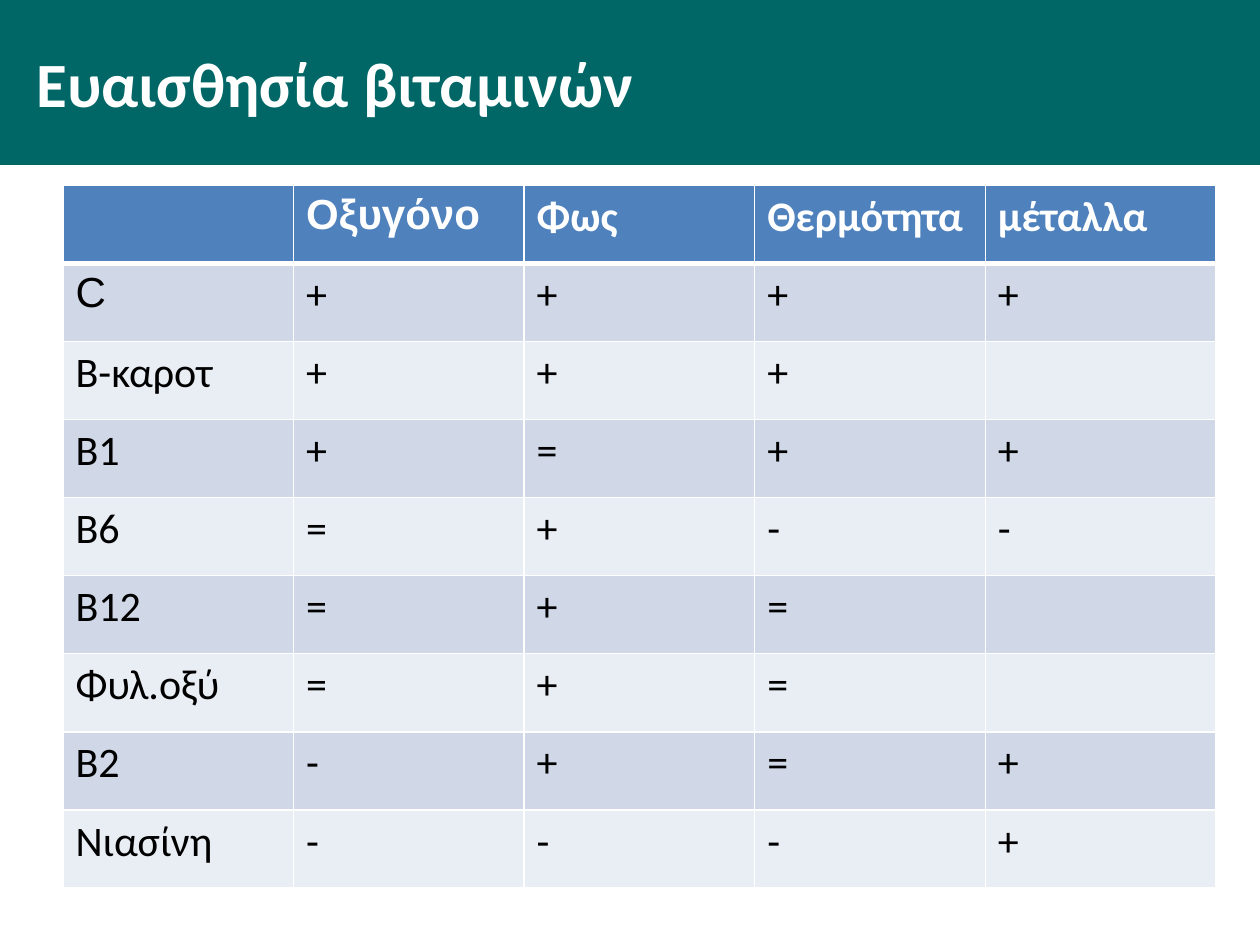
from lxml.etree import SubElement
from pptx import Presentation
from pptx.dml.color import RGBColor
from pptx.enum.shapes import MSO_SHAPE
from pptx.enum.text import MSO_ANCHOR, PP_ALIGN
from pptx.oxml.ns import qn
from pptx.util import Inches, Pt

TEAL = RGBColor(0x00, 0x66, 0x66)
BLUE = RGBColor(0x4F, 0x81, 0xBD)
BAND_DARK = RGBColor(0xD0, 0xD8, 0xE8)
BAND_LIGHT = RGBColor(0xE9, 0xED, 0xF4)
WHITE = RGBColor(0xFF, 0xFF, 0xFF)
BLACK = RGBColor(0x00, 0x00, 0x00)

SENSITIVITY = [
    ["", "Οξυγόνο", "Φως", "Θερμότητα", "μέταλλα"],
    ["C", "+", "+", "+", "+"],
    ["Β-καροτ", "+", "+", "+", ""],
    ["Β1", "+", "=", "+", "+"],
    ["Β6", "=", "+", "-", "-"],
    ["Β12", "=", "+", "=", ""],
    ["Φυλ.οξύ", "=", "+", "=", ""],
    ["Β2", "-", "+", "=", "+"],
    ["Νιασίνη", "-", "-", "-", "+"],
]
ARIAL_LABELS = {"Οξυγόνο", "C"}


def write(frame, wording, size, color, **formats):
    """Put one formatted run into a text frame."""
    run = frame.paragraphs[0].add_run()
    run.text = wording
    run.font.color.rgb = color
    for name, value in {"size": Pt(size), "name": "Calibri", **formats}.items():
        setattr(run.font, name, value)


def add_title_band(slide, wording):
    """Draw the full-width band that holds the title."""
    band = slide.shapes.add_shape(
        MSO_SHAPE.RECTANGLE, 0, 0, Inches(10), Inches(1.31))
    band.shadow.inherit = False
    band.fill.solid()
    band.fill.fore_color.rgb = TEAL
    band.line.fill.background()
    frame = band.text_frame
    layout = {"word_wrap": True, "margin_left": Inches(0.29),
              "vertical_anchor": MSO_ANCHOR.MIDDLE}
    for name, value in layout.items():
        setattr(frame, name, value)
    frame.paragraphs[0].alignment = PP_ALIGN.LEFT
    write(frame, wording, 36, WHITE, bold=True)


def add_borders(cell, row):
    """Edge a cell in white, with a heavier rule under the header."""
    widths = {"a:lnL": 1, "a:lnR": 1, "a:lnT": 3 if row == 1 else 1,
              "a:lnB": 3 if row == 0 else 1}
    properties = cell._tc.get_or_add_tcPr()
    for side, width in widths.items():
        line = SubElement(properties, qn(side), w=str(Pt(width)))
        fill = SubElement(line, qn("a:solidFill"))
        SubElement(fill, qn("a:srgbClr"), val=str(WHITE))


def fill_cell(cell, wording, row):
    """Style one cell by its row and write its wording."""
    header = row == 0
    add_borders(cell, row)
    cell.fill.solid()
    cell.fill.fore_color.rgb = (
        BLUE if header else BAND_DARK if row % 2 else BAND_LIGHT)
    if wording:
        write(cell.text_frame, wording, 24, WHITE if header else BLACK,
              bold=header,
              name="Arial" if wording in ARIAL_LABELS else "Calibri")


def add_sensitivity_table(slide, rows):
    """Build the vitamin table with equal rows and columns."""
    table = slide.shapes.add_table(
        len(rows), len(rows[0]), Inches(0.5), Inches(1.47),
        Inches(9.15), Inches(5.58)).table
    for row, wordings in enumerate(rows):
        for column, wording in enumerate(wordings):
            fill_cell(table.cell(row, column), wording, row)


def main():
    """Build and save the slide."""
    deck = Presentation()
    deck.slide_width, deck.slide_height = Inches(10), Inches(7.5)
    slide = deck.slides.add_slide(deck.slide_layouts[6])
    add_title_band(slide, "Ευαισθησία βιταμινών")
    add_sensitivity_table(slide, SENSITIVITY)
    deck.save("out.pptx")


if __name__ == "__main__":
    main()
